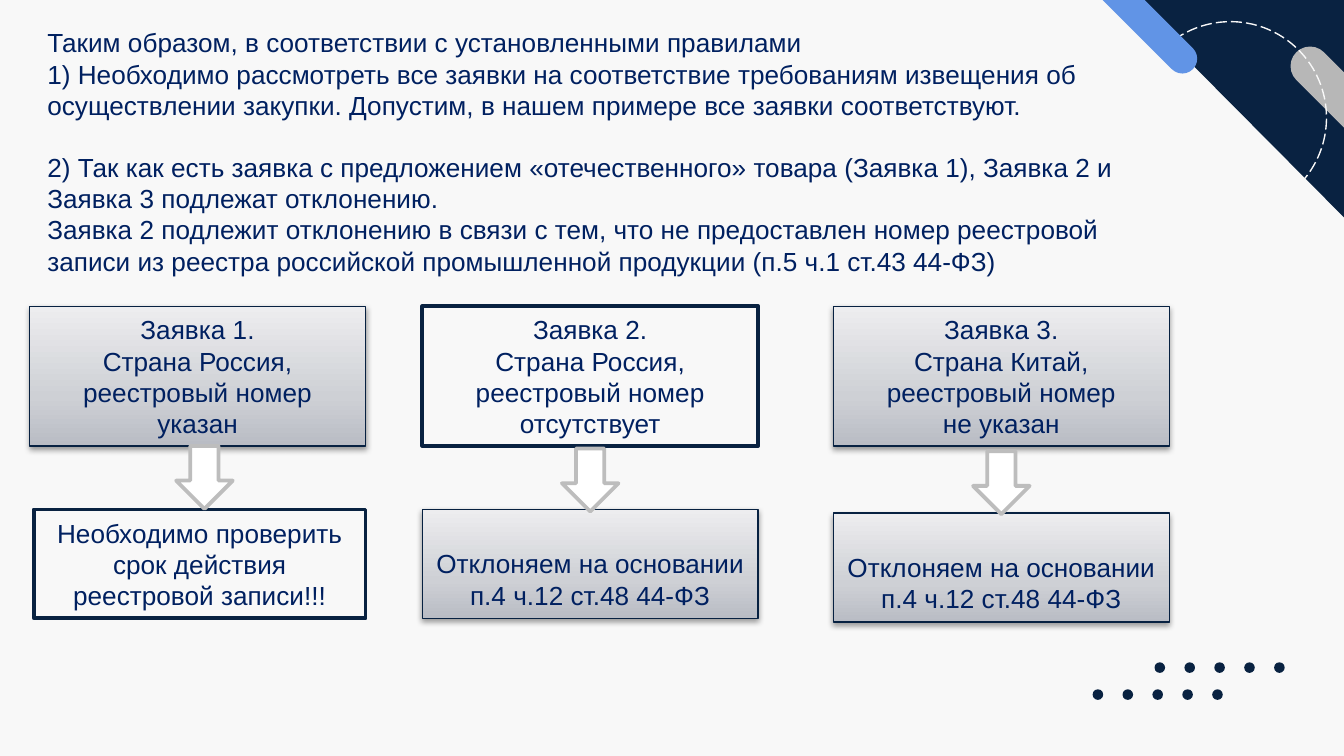
from typing import NamedTuple

from lxml import etree
from pptx import Presentation
from pptx import util as u
from pptx.dml.color import RGBColor
from pptx.enum import dml, shapes, text
from pptx.oxml.ns import qn

Cm, Pt = u.Cm, u.Pt
Kind = shapes.MSO_SHAPE

HEX = {
    "back": "F8F8F8", "navy": "092241", "edge": "072141", "ink": "002060",
    "blue": "6194E6", "grey": "B7B7B7", "rim": "BDBDBD", "white": "FFFFFF",
    "black": "000000",
}
GRAD = {0: "B9BCC4", 35000: "CED0D5", 100000: "EDEDEF"}
SIZE = 14
LINE = Pt(SIZE * 1.15)


class Area(NamedTuple):
    x: float
    y: float
    w: float
    h: float


class Card(NamedTuple):
    area: Area
    lines: list[str]
    plain: bool = False
    drop: int = 0  # empty space above the text


INTRO = [
    "Таким образом, в соответствии с установленными правилами",
    "1) Необходимо рассмотреть все заявки на соответствие требованиям извещения об",
    "осуществлении закупки. Допустим, в нашем примере все заявки соответствуют.",
    "2) Так как есть заявка с предложением «отечественного» товара (Заявка 1), "
    "Заявка 2 и Заявка 3 подлежат отклонению.",
    "Заявка 2 подлежит отклонению в связи с тем, что не предоставлен номер реестровой "
    "записи из реестра российской промышленной продукции (п.5 ч.1 ст.43 44-ФЗ)",
]
REJECT = ["Отклоняем на основании", "п.4 ч.12 ст.48 44-ФЗ"]
COLS = [0.56, 7.98, 15.75]
WIDE, TOP, TALL, LOW = 6.35, 5.79, 2.64, 2.06
CARDS = [
    Card(Area(COLS[0], TOP, WIDE, TALL),
         ["Заявка 1.", "Страна Россия,", "реестровый номер указан"]),
    Card(Area(COLS[1], TOP, WIDE, TALL),
         ["Заявка 2.", "Страна Россия,", "реестровый номер", "отсутствует"], plain=True),
    Card(Area(COLS[2], TOP, WIDE, TALL),
         ["Заявка 3.", "Страна Китай,", "реестровый номер", "не указан"]),
    Card(Area(0.64, 9.63, 6.27, LOW),
         ["Необходимо проверить", "срок действия", "реестровой записи!!!"], plain=True),
    Card(Area(COLS[1], 9.63, WIDE, LOW), REJECT, drop=LINE),
    Card(Area(COLS[2], 9.7, WIDE, LOW), REJECT, drop=LINE),
]
ARROWS = [Area(x, y, 1.07, 1.19) for x, y in [(3.33, 8.43), (10.62, 8.48), (18.39, 8.53)]]
DOTS = [Area(x + 0.565 * i, y, 0.2, 0.2)
        for x, y in [(21.82, 12.52), (20.65, 13.03)] for i in range(5)]


def rgb(name: str) -> RGBColor:
    return RGBColor.from_string(HEX[name])


def draw(slide, kind, area: Area, fill: str = "", line: str = "", width: float = 0.75):
    """Add a flat shape; an empty colour name means none."""
    shape = slide.shapes.add_shape(kind, *map(Cm, area))
    shape.shadow.inherit = False
    if fill:
        shape.fill.solid()
        shape.fill.fore_color.rgb = rgb(fill)
    else:
        shape.fill.background()
    if line:
        shape.line.color.rgb = rgb(line)
        shape.line.width = Pt(width)
    else:
        shape.line.fill.background()
    return shape


def tint(parent, value: str):
    return etree.SubElement(parent, qn("a:srgbClr"), val=value)


def shade(shape) -> None:
    """Give a shape the grey gradient and a soft shadow below."""
    shape.fill.gradient()
    shape.fill.gradient_angle = 90
    props = shape.fill._xPr
    stops = props.find(".//" + qn("a:gsLst"))
    for old in list(stops):
        stops.remove(old)
    for pos, value in GRAD.items():
        tint(etree.SubElement(stops, qn("a:gs"), pos=str(pos)), value)
    cast = etree.SubElement(props.find(qn("a:effectLst")), qn("a:outerShdw"),
                            blurRad="40000", dist="20000", dir="5400000", rotWithShape="0")
    etree.SubElement(tint(cast, HEX["black"]), qn("a:alpha"), val="38000")


def write(frame, lines: list[str], align) -> None:
    frame.word_wrap = True
    frame.auto_size = text.MSO_AUTO_SIZE.NONE
    frame.text = "\n".join(lines)
    for para in frame.paragraphs:
        para.alignment = align
        para.space_before = Pt(0)
        para.font.size = Pt(SIZE)
        para.font.name = "Arial"
        para.font.color.rgb = rgb("ink")


def corner(slide) -> None:
    for dot in DOTS:
        draw(slide, Kind.OVAL, dot, "navy")
    wedge = draw(slide, Kind.RIGHT_TRIANGLE, Area(21.26, -0.03, 4.32, 4.29), "navy")
    wedge.rotation = 270
    wedge._element.spPr.find(qn("a:xfrm")).set("flipH", "1")
    bar(slide, Area(24.03, 1.75, 3.2, 0.74), "grey")
    ring = draw(slide, Kind.OVAL, Area(21.44, 0.41, 3.63, 3.63), line="back")
    ring.line.dash_style = dml.MSO_LINE.LONG_DASH
    bar(slide, Area(19.94, -0.05, 3.05, 0.56), "blue")


def bar(slide, area: Area, fill: str) -> None:
    shape = draw(slide, Kind.ROUNDED_RECTANGLE, area, fill)
    shape.adjustments[0] = 0.5
    shape.rotation = 45


def intro(slide) -> None:
    body = slide.placeholders[1]
    body.left, body.top, body.width, body.height = map(Cm, (0.64, 0.38, 21.16, 5.05))
    write(body.text_frame, INTRO, text.PP_ALIGN.LEFT)
    for para in body.text_frame.paragraphs:
        props = para._p.get_or_add_pPr()
        props.set("marL", "0")
        props.set("indent", "0")
        etree.SubElement(props, qn("a:buNone"))
        # bullets come before the default run properties
        props.append(props.find(qn("a:defRPr")))
    body.text_frame.paragraphs[3].space_before = LINE


def place(slide, card: Card) -> None:
    if card.plain:
        shape = draw(slide, Kind.RECTANGLE, card.area, "back", "navy", 2)
    else:
        shape = draw(slide, Kind.RECTANGLE, card.area, "back", "edge")
        shade(shape)
    frame = shape.text_frame
    write(frame, card.lines, text.PP_ALIGN.CENTER)
    frame.vertical_anchor = text.MSO_ANCHOR.MIDDLE
    frame.margin_top = Cm(0.13) + card.drop


def main() -> None:
    deck = Presentation()
    deck.slide_width, deck.slide_height = Cm(25.4), Cm(14.29)
    slide = deck.slides.add_slide(deck.slide_layouts[1])
    slide.background.fill.solid()
    slide.background.fill.fore_color.rgb = rgb("back")
    title = slide.shapes.title._element
    title.getparent().remove(title)
    corner(slide)
    intro(slide)
    for card in CARDS:
        place(slide, card)
    for area in ARROWS:
        draw(slide, Kind.DOWN_ARROW, area, "white", "rim", 2)
    deck.save("out.pptx")


if __name__ == "__main__":
    main()
